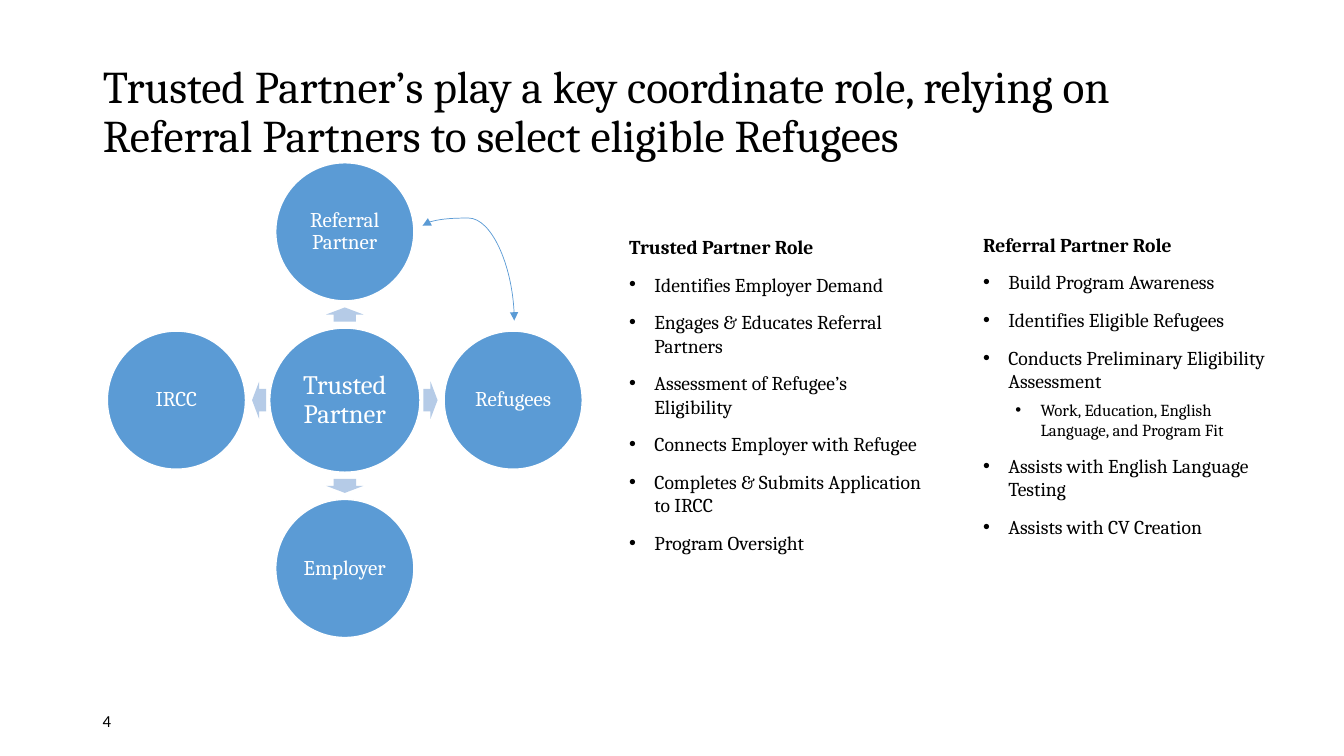
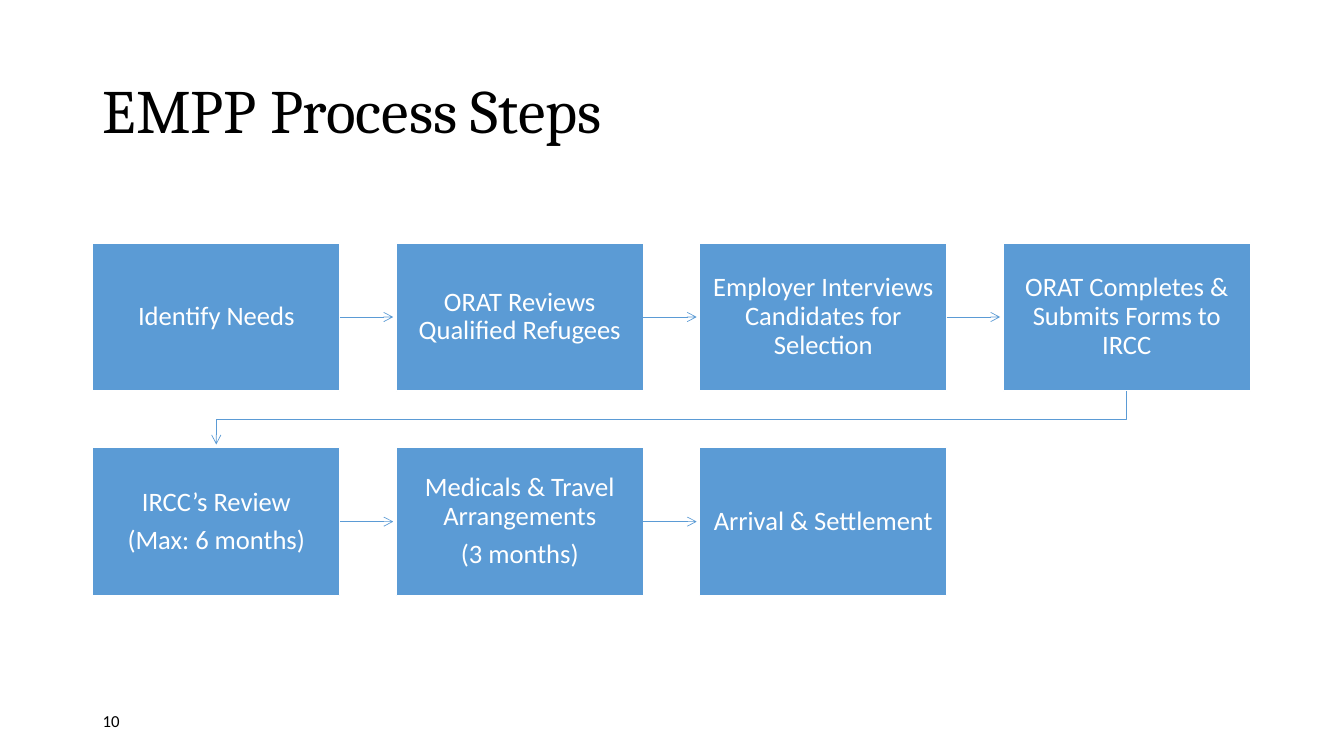
import math
from dataclasses import dataclass

import pptx
import pptx.dml.color
import pptx.enum.shapes
import pptx.enum.text
import pptx.oxml
import pptx.oxml.ns
import pptx.util
from pptx.util import Inches

SHAPE = pptx.enum.shapes.MSO_SHAPE
CONNECTOR = pptx.enum.shapes.MSO_CONNECTOR
ALIGN = pptx.enum.text.PP_ALIGN
MIDDLE = pptx.enum.text.MSO_ANCHOR.MIDDLE
qn = pptx.oxml.ns.qn


@dataclass(frozen=True)
class Theme:
    blue: str = "5B9BD5"
    pale_blue: str = "B5CBE7"
    white: str = "FFFFFF"
    black: str = "000000"
    serif: str = "Cambria"
    sans: str = "Calibri"
    title_size: float = 44
    long_title_size: float = 32.4
    large_size: float = 19
    circle_size: float = 15
    list_size: float = 14
    small_size: float = 12
    tight: float = 0.9


THEME = Theme()


@dataclass(frozen=True)
class Satellite:
    label: str
    angle: int


@dataclass(frozen=True)
class RoleItem:
    text: str
    level: int = 0


@dataclass(frozen=True)
class RoleList:
    heading: str
    left: float
    top: float
    height: float
    items: tuple[RoleItem, ...]


@dataclass(frozen=True)
class Step:
    lines: tuple[str, ...]
    column: int
    row: int


HUB_X, HUB_Y = 3.42, 3.97
SATELLITES = (
    Satellite("Referral Partner", 270),
    Satellite("Refugees", 0),
    Satellite("Employer", 90),
    Satellite("IRCC", 180),
)
ROLE_LISTS = (
    RoleList("Trusted Partner Role", 6.14, 2.28, 3.8, (
        RoleItem("Identifies Employer Demand"),
        RoleItem("Engages & Educates Referral Partners"),
        RoleItem("Assessment of Refugee’s Eligibility"),
        RoleItem("Connects Employer with Refugee"),
        RoleItem("Completes & Submits Application to IRCC"),
        RoleItem("Program Oversight"),
    )),
    RoleList("Referral Partner Role", 9.65, 2.26, 3.42, (
        RoleItem("Build Program Awareness"),
        RoleItem("Identifies Eligible Refugees"),
        RoleItem("Conducts Preliminary Eligibility Assessment"),
        RoleItem("Work, Education, English Language, and Program Fit", 1),
        RoleItem("Assists with English Language Testing"),
        RoleItem("Assists with CV Creation"),
    )),
)
STEPS = (
    Step(("Identify Needs",), 0, 0),
    Step(("ORAT Reviews Qualified Refugees",), 1, 0),
    Step(("Employer Interviews Candidates for Selection",), 2, 0),
    Step(("ORAT Completes & Submits Forms to IRCC",), 3, 0),
    Step(("IRCC’s Review", "(Max: 6 months)"), 0, 1),
    Step(("Medicals & Travel Arrangements", "(3 months)"), 1, 1),
    Step(("Arrival & Settlement",), 2, 1),
)
STEP_WIDTH, STEP_HEIGHT = 2.45, 1.47
STEP_LEFT, STEP_TOP = 0.92, 2.41
COLUMN_PITCH, ROW_PITCH = 3.01, 2.03
ARROW_GAP = 0.03


def color(value: str) -> pptx.dml.color.RGBColor:
    return pptx.dml.color.RGBColor.from_string(value)


def write(frame, text: str, *, size: float, font: str = THEME.serif,
          fill: str = THEME.black, bold: bool = False, align=ALIGN.LEFT,
          line_spacing: float = 1.0, space_before: float = 0,
          level: int = 0, bullet: str = "") -> None:
    """Append a paragraph; the first one in a frame gets no space before."""
    is_first = not frame.text
    paragraph = frame.paragraphs[0] if is_first else frame.add_paragraph()
    paragraph.level = level
    paragraph.alignment = align
    properties = paragraph._p.get_or_add_pPr()
    if bullet:
        properties.set("marL", str(Inches(0.57 if level else 0.25)))
        properties.set("indent", str(Inches(-0.25)))
        pptx.oxml.ns  # noqa
        mark = properties.makeelement(qn("a:buChar"), {"char": bullet})
    else:
        properties.set("marL", "0")
        properties.set("indent", "0")
        mark = properties.makeelement(qn("a:buNone"), {})
    properties.append(mark)
    paragraph.line_spacing = line_spacing
    paragraph.space_before = pptx.util.Pt(0 if is_first else space_before)
    paragraph.space_after = pptx.util.Pt(0)
    run = paragraph.add_run()
    run.text = text
    run.font.name = font
    run.font.size = pptx.util.Pt(size)
    run.font.bold = bold
    run.font.color.rgb = color(fill)


def place(shape, left: float, top: float, width: float, height: float) -> None:
    shape.left, shape.top = Inches(left), Inches(top)
    shape.width, shape.height = Inches(width), Inches(height)


def prepare_frame(shape, margin_x: float = 0.1, margin_y: float = 0.05,
                  anchor=MIDDLE):
    frame = shape.text_frame
    frame.word_wrap = True
    frame.auto_size = pptx.enum.text.MSO_AUTO_SIZE.NONE
    frame.vertical_anchor = anchor
    frame.margin_left = frame.margin_right = Inches(margin_x)
    frame.margin_top = frame.margin_bottom = Inches(margin_y)
    return frame


def add_filled_shape(slide, kind, left: float, top: float, width: float,
                     height: float, fill: str, outlined: bool = True):
    shape = slide.shapes.add_shape(kind, Inches(left), Inches(top),
                                   Inches(width), Inches(height))
    shape.shadow.inherit = False
    shape.fill.solid()
    shape.fill.fore_color.rgb = color(fill)
    if outlined:
        shape.line.color.rgb = color(THEME.white)
        shape.line.width = pptx.util.Pt(1)
    else:
        shape.line.fill.background()
    return shape


def add_line(slide, kind, start: tuple[float, float], end: tuple[float, float],
             *, tail: str, head: str = "none", quarter_turns: int = 0,
             bend: int = 50000):
    """Draw a connector; quarter turns swap its box so the ends stay put."""
    (x1, y1), (x2, y2) = start, end
    if quarter_turns:
        center_x, center_y = (x1 + x2) / 2, (y1 + y2) / 2
        sign = 1 if quarter_turns == 1 else -1
        half_x, half_y = sign * (y2 - y1) / 2, sign * (x1 - x2) / 2
        x1, y1 = center_x - half_x, center_y - half_y
        x2, y2 = center_x + half_x, center_y + half_y
    connector = slide.shapes.add_connector(
        kind, Inches(x1), Inches(y1), Inches(x2), Inches(y2))
    connector.line.color.rgb = color(THEME.blue)
    connector.line.width = pptx.util.Pt(0.5)
    properties = connector.element.spPr
    if quarter_turns:
        properties.find(qn("a:xfrm")).set("rot", str(quarter_turns * 5400000))
        guides = properties.find(qn("a:prstGeom")).get_or_add_avLst()
        guides.append(guides.makeelement(
            qn("a:gd"), {"name": "adj1", "fmla": f"val {bend}"}))
    outline = properties.find(qn("a:ln"))
    for tag, arrow in (("a:headEnd", head), ("a:tailEnd", tail)):
        outline.append(outline.makeelement(qn(tag), {"type": arrow}))
    properties.append(properties.makeelement(qn("a:effectLst"), {}))
    return connector


def add_titled_slide(presentation, layout: int, title: str, size: float,
                     number: str):
    slide = presentation.slides.add_slide(presentation.slide_layouts[layout])
    place(slide.shapes.title, 0.92, 0.4, 11.5, 1.45)
    write(prepare_frame(slide.shapes.title), title, size=size,
          line_spacing=THEME.tight)
    number_box = slide.shapes.add_textbox(
        Inches(0.92), Inches(6.95), Inches(3), Inches(0.4))
    write(prepare_frame(number_box), number, size=THEME.small_size,
          font=THEME.sans)
    return slide


def add_circle(slide, label: str, center_x: float, center_y: float,
               width: float, height: float, size: float) -> None:
    circle = add_filled_shape(slide, SHAPE.OVAL, center_x - width / 2,
                              center_y - height / 2, width, height, THEME.blue)
    write(prepare_frame(circle, 0.02, 0.02), label, size=size,
          fill=THEME.white, align=ALIGN.CENTER, line_spacing=THEME.tight)


def add_partner_wheel(slide) -> None:
    add_circle(slide, "Trusted Partner", HUB_X, HUB_Y, 1.49, 1.43,
               THEME.large_size)
    for satellite in SATELLITES:
        direction_x = math.cos(math.radians(satellite.angle))
        direction_y = math.sin(math.radians(satellite.angle))
        arrow = add_filled_shape(
            slide, SHAPE.RIGHT_ARROW, HUB_X + 0.85 * direction_x - 0.07,
            HUB_Y + 0.85 * direction_y - 0.185, 0.14, 0.37,
            THEME.pale_blue, outlined=False)
        arrow.adjustments[0], arrow.adjustments[1] = 0.6, 0.5
        arrow.rotation = satellite.angle
        add_circle(slide, satellite.label, HUB_X + 1.67 * direction_x,
                   HUB_Y + 1.67 * direction_y, 1.37, 1.37, THEME.circle_size)
    add_line(slide, CONNECTOR.CURVE, (4.19, 2.24), (5.1, 3.18),
             head="triangle", tail="triangle", quarter_turns=3, bend=-8200)


def fill_role_list(placeholder, role: RoleList) -> None:
    place(placeholder, role.left, role.top, 3.13, role.height)
    frame = prepare_frame(placeholder, anchor=pptx.enum.text.MSO_ANCHOR.TOP)
    write(frame, role.heading, size=THEME.list_size, bold=True)
    for item in role.items:
        write(frame, item.text, level=item.level, bullet="•",
              size=THEME.small_size if item.level else THEME.list_size,
              space_before=5 if item.level else 10)


def add_process(slide) -> None:
    boxes = []
    for step in STEPS:
        box = add_filled_shape(
            slide, SHAPE.RECTANGLE, STEP_LEFT + step.column * COLUMN_PITCH,
            STEP_TOP + step.row * ROW_PITCH, STEP_WIDTH, STEP_HEIGHT,
            THEME.blue)
        frame = prepare_frame(box, 0.12, 0.13)
        for line in step.lines:
            write(frame, line, size=THEME.large_size, font=THEME.sans,
                  fill=THEME.white, align=ALIGN.CENTER,
                  line_spacing=THEME.tight, space_before=6.65)
        boxes.append(box)
    for step, following, box in zip(STEPS, STEPS[1:], boxes):
        left = STEP_LEFT + step.column * COLUMN_PITCH
        top = STEP_TOP + step.row * ROW_PITCH
        if step.row == following.row:
            middle = top + STEP_HEIGHT / 2
            arrow = add_line(
                slide, CONNECTOR.STRAIGHT, (left + STEP_WIDTH, middle),
                (left + COLUMN_PITCH - ARROW_GAP, middle), tail="arrow")
            arrow.begin_connect(box, 3)
        else:
            add_line(slide, CONNECTOR.ELBOW,
                     (left + STEP_WIDTH / 2, top + STEP_HEIGHT),
                     (STEP_LEFT + STEP_WIDTH / 2, top + ROW_PITCH - ARROW_GAP),
                     tail="arrow", quarter_turns=1, bend=53000)


def main() -> None:
    presentation = pptx.Presentation()
    presentation.slide_width = Inches(13.33)
    presentation.slide_height = Inches(7.5)

    roles_slide = add_titled_slide(
        presentation, 3,
        "Trusted Partner’s play a key coordinate role, relying on "
        "Referral Partners to select eligible Refugees",
        THEME.long_title_size, "4")
    add_partner_wheel(roles_slide)
    for index, role in enumerate(ROLE_LISTS, start=1):
        fill_role_list(roles_slide.placeholders[index], role)

    add_process(add_titled_slide(
        presentation, 5, "EMPP Process Steps", THEME.title_size, "10"))
    presentation.save("out.pptx")


if __name__ == "__main__":
    main()
